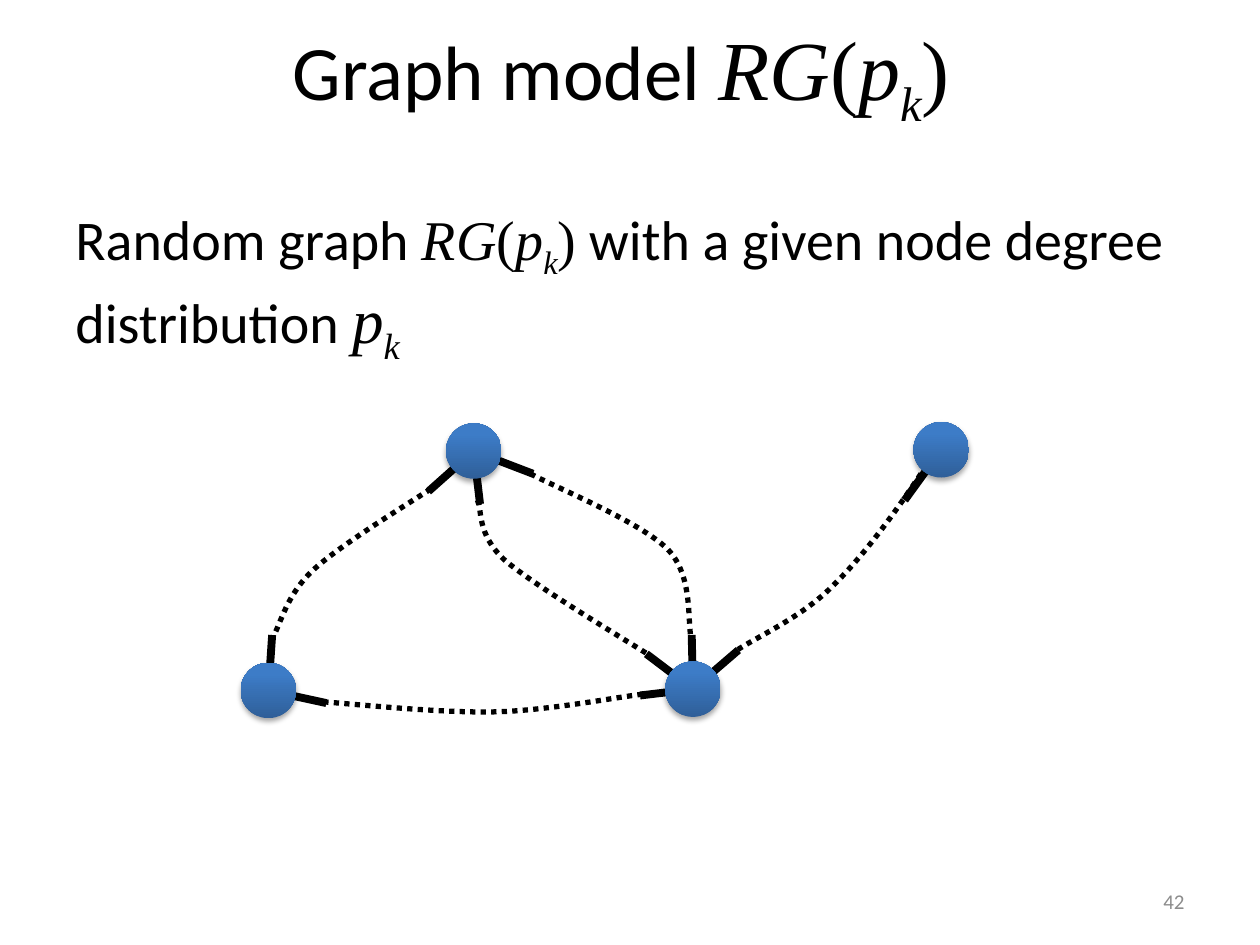
from dataclasses import dataclass

import pptx
import pptx.dml.color
import pptx.enum.dml
import pptx.enum.shapes
import pptx.enum.text
import pptx.oxml
import pptx.oxml.ns
import pptx.oxml.xmlchemy
import pptx.util
from pptx.util import Inches

qn = pptx.oxml.ns.qn
new_element = pptx.oxml.xmlchemy.OxmlElement
ALIGN = pptx.enum.text.PP_ALIGN
MIDDLE = pptx.enum.text.MSO_ANCHOR.MIDDLE


def rgb(code):
    return pptx.dml.color.RGBColor.from_string(code)


@dataclass(frozen=True)
class Theme:
    ink = rgb("000000")
    muted = rgb("8C8C8C")
    node_dark = rgb("2F5F99")
    node_light = rgb("3D7CC7")
    text_font = "Calibri"
    math_font = "Times New Roman"
    title_size = pptx.util.Pt(44)
    title_math_size = pptx.util.Pt(48)
    body_size = pptx.util.Pt(32)
    body_math_size = pptx.util.Pt(36)
    number_size = pptx.util.Pt(12)
    stub_width = pptx.util.Pt(4.5)
    edge_width = pptx.util.Pt(3)


THEME = Theme()

# Math spans: text, italic, subscript
DEGREE = [("p", True, False), ("k", True, True)]
MODEL = [("RG", True, False), ("(", False, False), *DEGREE, (")", False, False)]

# Graph geometry in inches, relative to the graph box
NODE_SIZE = 0.44
NODES = [  # centre, tips of its stubs
    ((5.57, 0.27), [(5.28, 0.67)]),
    ((1.86, 0.28), [(1.5, 0.6), (1.91, 0.7), (2.33, 0.46)]),
    ((3.6, 2.17), [(3.96, 1.86), (3.59, 1.74), (3.23, 1.89), (3.18, 2.22)]),
    ((0.23, 2.18), [(0.69, 2.28), (0.26, 1.74)]),
]
EDGES = [  # start, then two controls and an end for each Bezier piece
    [(5.41, 0.46), (5.19, 0.79), (4.94, 1.13), (4.7, 1.36),
     (4.46, 1.6), (4.1, 1.76), (3.95, 1.86)],
    [(2.31, 0.46), (2.49, 0.56), (3.18, 0.84), (3.4, 1.06),
     (3.61, 1.28), (3.55, 1.64), (3.59, 1.79)],
    [(3.2, 2.21), (3.01, 2.23), (2.45, 2.34), (2.03, 2.35),
     (1.6, 2.36), (0.94, 2.29), (0.66, 2.27)],
    [(1.52, 0.58), (1.37, 0.68), (0.79, 1.03), (0.58, 1.23),
     (0.37, 1.43), (0.33, 1.65), (0.26, 1.77)],
    [(1.89, 0.67), (1.93, 0.75), (1.88, 0.93), (2.1, 1.14),
     (2.33, 1.34), (3.0, 1.74), (3.24, 1.89)],
]
NODE_SHADOW = (
    f'<a:effectLst {pptx.oxml.ns.nsdecls("a")}>'
    '<a:outerShdw blurRad="39370" dist="22860" dir="5400000" rotWithShape="0">'
    '<a:srgbClr val="000000"><a:alpha val="35000"/></a:srgbClr>'
    '</a:outerShdw></a:effectLst>'
)


def place(shape, left, top, width, height):
    shape.left, shape.top = Inches(left), Inches(top)
    shape.width, shape.height = Inches(width), Inches(height)


def style_paragraph(para, size, color, align):
    para.alignment = align
    para.font.name = THEME.text_font
    para.font.size = size
    para.font.color.rgb = color


def add_text(para, text):
    span = para.add_run()
    span.text = text
    return span


def add_math(para, parts, size):
    for text, italic, subscript in parts:
        span = add_text(para, text)
        span.font.name = THEME.math_font
        span.font.size = size
        span.font.italic = italic
        if subscript:
            span._r.get_or_add_rPr().set("baseline", "-25000")


def add_title(page, *box):
    title = page.shapes.title
    place(title, *box)
    title.text_frame.vertical_anchor = MIDDLE
    para = title.text_frame.paragraphs[0]
    style_paragraph(para, THEME.title_size, THEME.ink, ALIGN.CENTER)
    add_text(para, "Graph model ")
    add_math(para, MODEL, THEME.title_math_size)
    add_text(para, " ")


def add_body(page, *box):
    frame = page.shapes.add_textbox(*map(Inches, box)).text_frame
    frame.word_wrap = True
    para = frame.paragraphs[0]
    style_paragraph(para, THEME.body_size, THEME.ink, ALIGN.LEFT)
    para.space_before = pptx.util.Pt(6.4)
    add_text(para, "Random graph ")
    add_math(para, MODEL, THEME.body_size)
    add_text(para, " with a given node degree distribution ")
    add_math(para, DEGREE, THEME.body_math_size)


def add_page_number(page, *box):
    frame = page.shapes.add_textbox(*map(Inches, box)).text_frame
    frame.word_wrap = True
    frame.vertical_anchor = MIDDLE
    para = frame.paragraphs[0]
    style_paragraph(para, THEME.number_size, THEME.muted, ALIGN.RIGHT)
    add_text(para, "42")


def add_stub(page, start, tip):
    kind = pptx.enum.shapes.MSO_CONNECTOR.STRAIGHT
    stub = page.shapes.add_connector(kind, *map(Inches, start + tip))
    stub.line.color.rgb = THEME.ink
    stub.line.width = THEME.stub_width
    stub._element.spPr.append(new_element("a:effectLst"))


def add_node(page, x, y):
    box = (x - NODE_SIZE / 2, y - NODE_SIZE / 2, NODE_SIZE, NODE_SIZE)
    kind = pptx.enum.shapes.MSO_SHAPE.OVAL
    node = page.shapes.add_shape(kind, *map(Inches, box))
    node.line.fill.background()
    node.fill.gradient()
    node.fill.gradient_angle = 90
    dark, light = node.fill.gradient_stops
    dark.color.rgb, dark.position = THEME.node_dark, 0
    light.color.rgb, light.position = THEME.node_light, 0.8
    node._element.spPr.append(pptx.oxml.parse_xml(NODE_SHADOW))


def add_edge(page, points):
    """Draw a dotted open curve through Bezier points."""
    start, *rest = [(Inches(x), Inches(y)) for x, y in points]
    builder = page.shapes.build_freeform(*start)
    builder.add_line_segments(rest, close=False)
    edge = builder.convert_to_shape()
    segments = list(edge._element.iter(qn("a:lnTo")))
    for index in range(0, len(segments), 3):
        curve = new_element("a:cubicBezTo")
        segments[index].addprevious(curve)
        for segment in segments[index:index + 3]:
            curve.append(segment[0])
            segment.getparent().remove(segment)
    edge.fill.background()
    edge.line.color.rgb = THEME.ink
    edge.line.width = THEME.edge_width
    edge.line.dash_style = pptx.enum.dml.MSO_LINE.ROUND_DOT
    edge._element.spPr.find(".//" + qn("a:prstDash")).set("val", "sysDot")
    edge.shadow.inherit = False


def add_graph(page, left, top):
    def shift(point):
        return left + point[0], top + point[1]

    for centre, tips in NODES:
        for tip in tips:
            add_stub(page, shift(centre), shift(tip))
        add_node(page, *shift(centre))
    for points in EDGES:
        add_edge(page, [shift(point) for point in points])


def main():
    deck = pptx.Presentation()
    deck.slide_width, deck.slide_height = Inches(10), Inches(7.5)
    page = deck.slides.add_slide(deck.slide_layouts[5])
    add_page_number(page, 7.17, 6.95, 2.33, 0.4)
    add_title(page, 0, 0, 10, 1.17)
    add_body(page, 0.5, 1.57, 9.34, 1.65)
    add_graph(page, 1.9, 3.3)
    deck.save("out.pptx")


if __name__ == "__main__":
    main()
